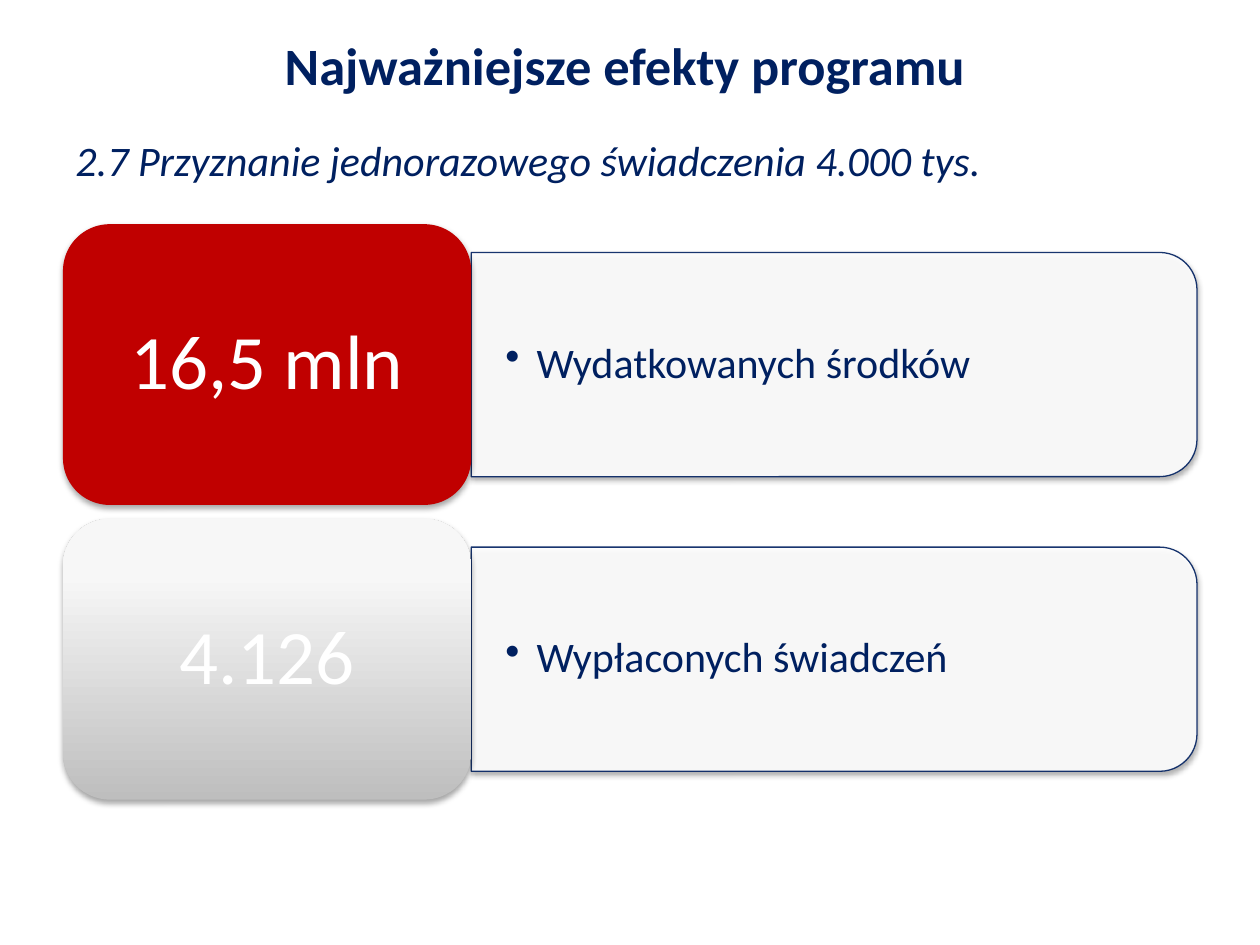
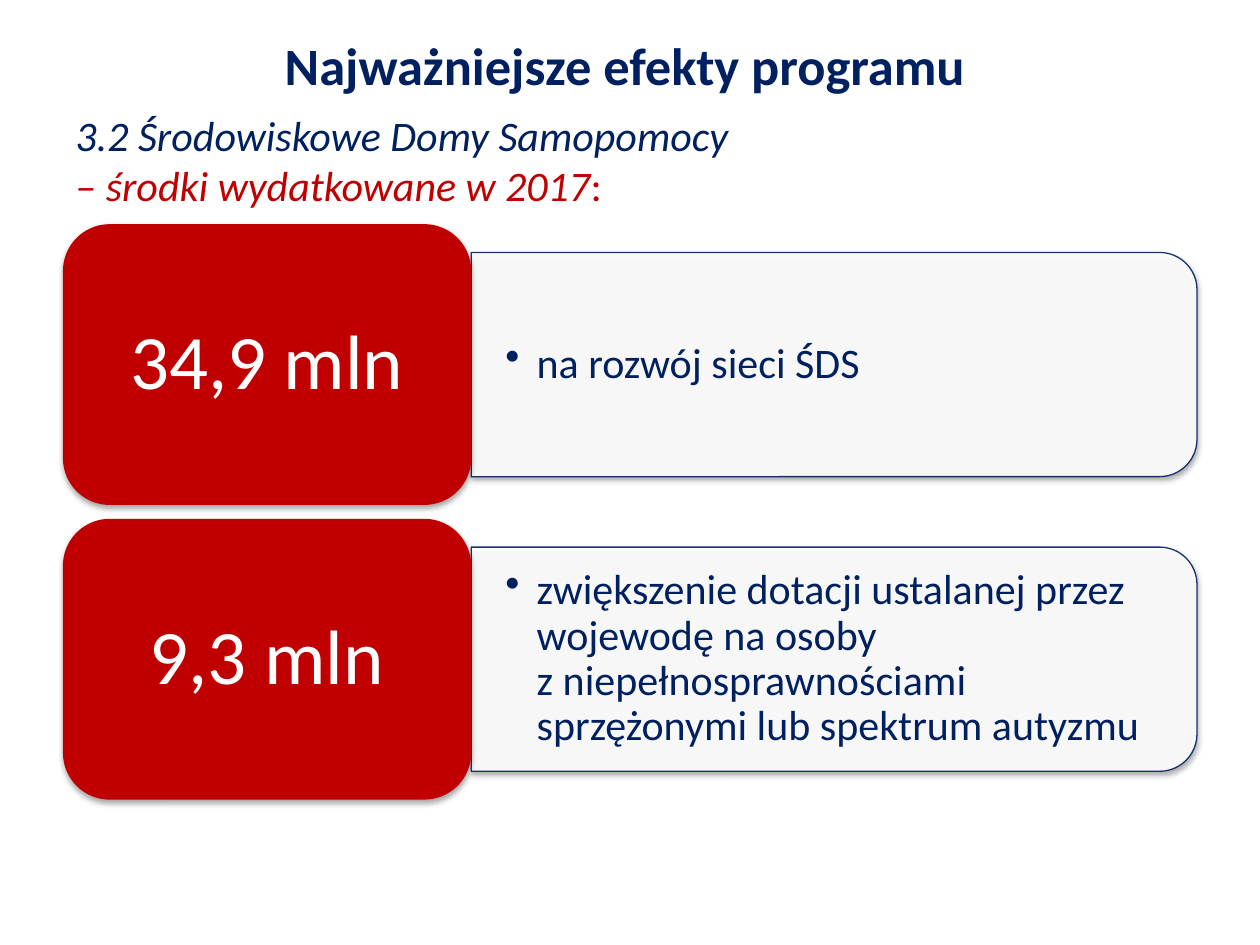
from copy import deepcopy

from lxml import etree
from pptx import Presentation
from pptx import util as u
from pptx.dml.color import RGBColor
from pptx.enum import shapes, text
from pptx.oxml.ns import qn

COLOURS = {
    "navy": "002060",
    "red": "C00000",
    "white": "FFFFFF",
    "shadow": "000000",
    "silver": "BEBEBE",
    "mist": "F7F7F7",
    "pale": "F8F8F8",
}
SILVER_STOPS = [(0, "silver"), (80, "mist"), (100, "pale")]
FONT = "Calibri"
HEADING = "Najważniejsze efekty programu"

ROW_TOP, ROW_PITCH = 4.52, 5.94
CARD_LEFT, CARD_WIDTH, CARD_HEIGHT = 1.27, 8.23, 5.66
PANEL_LEFT, PANEL_WIDTH, PANEL_HEIGHT = CARD_LEFT + CARD_WIDTH, 14.63, 4.52
LABEL_WIDTH, LABEL_HEIGHT = 14.4, 4.09

SLIDES = [
    (
        [("2.7 Przyznanie jednorazowego świadczenia 4.000 tys.", "navy", True)],
        [
            ("16,5 mln", "red", ["Wydatkowanych środków"]),
            ("4.126", "silver", ["Wypłaconych świadczeń"]),
        ],
    ),
    (
        [
            ("3.2 Środowiskowe Domy Samopomocy", "navy", True),
            None,
            ("– środki wydatkowane w 2017", "red", True),
            (":", "red", False),
        ],
        [
            ("34,9 mln", "red", ["na rozwój sieci ŚDS"]),
            ("9,3 mln", "red", [
                "zwiększenie dotacji ustalanej przez wojewodę na osoby",
                "z niepełnosprawnościami sprzężonymi lub spektrum autyzmu",
            ]),
        ],
    ),
]


def colour(name):
    return RGBColor.from_string(COLOURS[name])


def cm_box(*lengths):
    return [u.Cm(length) for length in lengths]


def add_span(para, words, size, colour_name, bold=False, italic=False):
    span = para.add_run()
    span.text = words
    font = span.font
    font.name, font.size = FONT, u.Pt(size)
    font.bold, font.italic = bold, italic
    font.color.rgb = colour(colour_name)
    return span


def add_break(para):
    last_style = para.runs[-1].font._element
    para.add_line_break()
    para._p.findall(qn("a:br"))[-1].append(deepcopy(last_style))


def set_frame(frame, side=0.25, end=0.13, anchor=text.MSO_ANCHOR.MIDDLE):
    frame.word_wrap = True
    frame.auto_size = text.MSO_AUTO_SIZE.NONE
    frame.vertical_anchor = anchor
    frame.margin_left = frame.margin_right = u.Cm(side)
    frame.margin_top = frame.margin_bottom = u.Cm(end)
    return frame.paragraphs[0]


def add_colour_xml(parent, name, alpha=None):
    element = etree.SubElement(parent, qn("a:srgbClr"), val=COLOURS[name])
    if alpha is not None:
        etree.SubElement(element, qn("a:alpha"), val=str(alpha * 1000))


def add_shadow(shape):
    shape.shadow.inherit = False
    effects = shape._element.spPr.find(qn("a:effectLst"))
    shadow = etree.SubElement(
        effects, qn("a:outerShdw"), blurRad="40000", dist="23000",
        dir="5400000", rotWithShape="0",
    )
    add_colour_xml(shadow, "shadow", 35)


def fill_silver(shape):
    shape.fill.gradient()
    shape.fill.gradient_angle = 90
    stops = shape._element.spPr.find(qn("a:gradFill")).find(qn("a:gsLst"))
    for stop in list(stops):
        stops.remove(stop)
    for position, name in SILVER_STOPS:
        stop = etree.SubElement(stops, qn("a:gs"), pos=str(position * 1000))
        add_colour_xml(stop, name)


def add_panel(page, row_top):
    left = PANEL_LEFT + (PANEL_WIDTH - PANEL_HEIGHT) / 2
    top = row_top + (CARD_HEIGHT - PANEL_WIDTH) / 2
    panel = page.shapes.add_shape(
        shapes.MSO_SHAPE.ROUND_2_SAME_RECTANGLE,
        *cm_box(left, top, PANEL_HEIGHT, PANEL_WIDTH),
    )
    panel.rotation = 90
    panel.fill.solid()
    panel.fill.fore_color.rgb = colour("white")
    panel.line.color.rgb = colour("navy")
    panel.line.width = u.Pt(0.75)
    for tint in panel._element.spPr.iter(qn("a:srgbClr")):
        etree.SubElement(tint, qn("a:alpha"), val="90000")
    add_shadow(panel)


def add_label(page, row_top, lines):
    top = row_top + (CARD_HEIGHT - LABEL_HEIGHT) / 2
    box = page.shapes.add_textbox(*cm_box(PANEL_LEFT, top, LABEL_WIDTH, LABEL_HEIGHT))
    para = set_frame(box.text_frame, side=0.69, end=0.34)
    para.line_spacing = 0.9
    properties = para._p.get_or_add_pPr()
    properties.set("marL", str(u.Cm(0.63)))
    properties.set("indent", str(u.Cm(-0.63)))
    etree.SubElement(properties, qn("a:buChar"), char="•")
    for index, line in enumerate(lines):
        if index:
            add_break(para)
        add_span(para, line, 24, "navy")


def add_card(page, row_top, amount, fill_name):
    card = page.shapes.add_shape(
        shapes.MSO_SHAPE.ROUNDED_RECTANGLE,
        *cm_box(CARD_LEFT, row_top, CARD_WIDTH, CARD_HEIGHT),
    )
    if fill_name == "silver":
        fill_silver(card)
    else:
        card.fill.solid()
        card.fill.fore_color.rgb = colour(fill_name)
    card.line.fill.background()
    add_shadow(card)
    para = set_frame(card.text_frame, side=0.46, end=0.23)
    para.alignment = text.PP_ALIGN.CENTER
    para.line_spacing = 0.9
    add_span(para, amount, 44, "white")


def add_subject(page, spans):
    title = page.shapes.title
    title.left, title.top, title.width, title.height = cm_box(1.27, 1.93, 22.86, 2.59)
    para = set_frame(title.text_frame)
    para.alignment = text.PP_ALIGN.LEFT
    for span in spans:
        if span is None:
            add_break(para)
        else:
            words, colour_name, italic = span
            add_span(para, words, 24, colour_name, italic=italic)


def add_heading(page):
    box = page.shapes.add_textbox(*cm_box(1.5, 0.53, 22.2, 1.55))
    para = set_frame(box.text_frame, anchor=text.MSO_ANCHOR.TOP)
    para.alignment = text.PP_ALIGN.CENTER
    add_span(para, HEADING, 30, "navy", bold=True)


def main():
    deck = Presentation()
    deck.slide_width, deck.slide_height = cm_box(25.4, 19.05)
    for subject, rows in SLIDES:
        page = deck.slides.add_slide(deck.slide_layouts[5])
        add_subject(page, subject)
        for index, (amount, fill_name, lines) in enumerate(rows):
            row_top = ROW_TOP + index * ROW_PITCH
            add_panel(page, row_top)
            add_label(page, row_top, lines)
            add_card(page, row_top, amount, fill_name)
        add_heading(page)
    deck.save("out.pptx")


if __name__ == "__main__":
    main()
